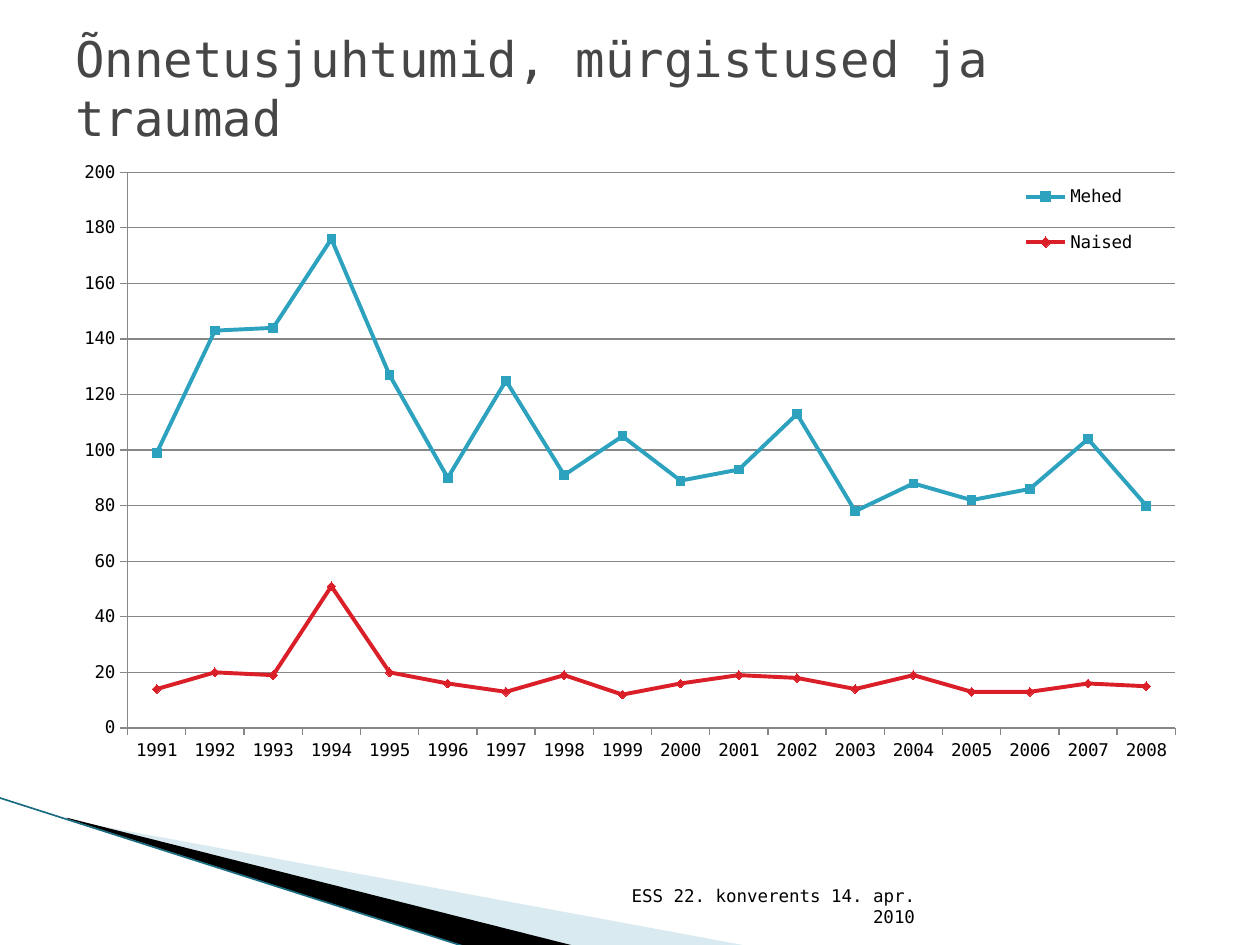
"""Build a slide with a line chart of accidents, poisonings and injuries by sex."""
from lxml import etree
from pptx import Presentation, util as u
from pptx.chart.data import CategoryChartData
from pptx.dml.color import RGBColor
from pptx.enum import chart as charts, shapes, text
from pptx.oxml import ns

TITLE = "Õnnetusjuhtumid, mürgistused ja traumad"
FOOTER = "ESS 22. konverents 14. apr. 2010"
YEARS = [str(year) for year in range(1991, 2009)]
SERIES = [
    ("Mehed", [99, 143, 144, 176, 127, 90, 125, 91, 105, 89, 93, 113, 78, 88, 82, 86, 104, 80]),
    ("Naised", [14, 20, 19, 51, 20, 16, 13, 19, 12, 16, 19, 18, 14, 19, 13, 13, 16, 15]),
]
THEME = {
    "font": "DejaVu Sans Mono", "title_size": 28, "body_size": 10,
    "title": "464646", "text": "000000", "grid": "878787", "edge": "1A6C80",
    "series": ["2DA2BF", "DA1F28"],
}
MARKERS = [(charts.XL_MARKER_STYLE.SQUARE, 5), (charts.XL_MARKER_STYLE.DIAMOND, 5)]
WEDGES = [
    ("A0CBDC", 40, [(0.55, 6.51), (5.95, 7.51), (4.56, 7.51), (0.55, 6.5)]),
    ("000000", 100, [(0.53, 6.49), (4.57, 7.51), (3.72, 7.52), (0.54, 6.5)]),
]
EDGE = [(-0.01, 6.33), (3.71, 7.52)]
WIDTH, HEIGHT, MARGIN = 10, 7.5, 0.5
TITLE_TOP, CHART_TOP, CHART_HEIGHT = 0.3, 1.09, 5.34
FOOTER_BOX = (4.79, 7.01, 2.57, 0.4)
PLOT_LAYOUT = {"x": 0.057, "y": 0.052, "w": 0.924, "h": 0.826}
LEGEND_LAYOUT = {"x": 0.831, "y": 0.035, "w": 0.13, "h": 0.174}


def color(name):
    return RGBColor.from_string(name)


def style_font(font, size, name):
    font.name, font.size = THEME["font"], u.Pt(size)
    font.color.rgb = color(name)


def style_line(line, name, width):
    line.color.rgb, line.width = color(name), u.Pt(width)


def add_wedge(slide, fill, opacity, points):
    start, *others = [(u.Inches(x), u.Inches(y)) for x, y in points]
    builder = slide.shapes.build_freeform(*start)
    builder.add_line_segments(others, close=True)
    shape = builder.convert_to_shape()
    shape.shadow.inherit = False
    shape.fill.solid()
    shape.fill.fore_color.rgb = color(fill)
    shape.line.fill.background()
    if opacity < 100:
        tint = next(shape._element.spPr.iter(ns.qn("a:srgbClr")))
        etree.SubElement(tint, ns.qn("a:alpha"), val=str(opacity * 1000))


def add_edge(slide):
    ends = [u.Inches(value) for point in EDGE for value in point]
    connector = slide.shapes.add_connector(shapes.MSO_CONNECTOR.STRAIGHT, *ends)
    style_line(connector.line, THEME["edge"], 0.95)
    etree.SubElement(connector._element.spPr, ns.qn("a:effectLst"))


def add_text(slide, box, content, size, name, anchor, alignment):
    shape = slide.shapes.add_textbox(*map(u.Inches, box))
    frame = shape.text_frame
    frame.word_wrap, frame.vertical_anchor = True, anchor
    frame.text = content
    paragraph = frame.paragraphs[0]
    paragraph.alignment = alignment
    style_font(paragraph.runs[0].font, size, name)


def set_layout(element, index, shares, inner=False):
    for old in element.findall(ns.qn("c:layout")):
        element.remove(old)
    layout = etree.Element(ns.qn("c:layout"))
    manual = etree.SubElement(layout, ns.qn("c:manualLayout"))
    settings = {"layoutTarget": "inner"} if inner else {}
    settings.update(xMode="edge", yMode="edge", **shares)
    for tag, value in settings.items():
        etree.SubElement(manual, ns.qn("c:" + tag), val=str(value))
    element.insert(index, layout)


def add_line_chart(slide):
    data = CategoryChartData()
    data.categories = YEARS
    for name, values in SERIES:
        data.add_series(name, values)
    box = (MARGIN, CHART_TOP, WIDTH - 2 * MARGIN, CHART_HEIGHT)
    chart = slide.shapes.add_chart(
        charts.XL_CHART_TYPE.LINE_MARKERS, *map(u.Inches, box), data).chart
    style_font(chart.font, THEME["body_size"], THEME["text"])
    chart.has_title = False
    chart.has_legend = True
    chart.legend.position = charts.XL_LEGEND_POSITION.RIGHT
    chart.legend.include_in_layout = False
    set_layout(chart.legend._element, 1, LEGEND_LAYOUT)
    set_layout(chart._chartSpace.chart.plotArea, 0, PLOT_LAYOUT, inner=True)

    values = chart.value_axis
    values.minimum_scale, values.maximum_scale, values.major_unit = 0, 200, 20
    values.has_major_gridlines = True
    style_line(values.major_gridlines.format.line, THEME["grid"], 0.75)
    chart.category_axis.has_major_gridlines = False
    for axis in (values, chart.category_axis):
        axis.major_tick_mark = charts.XL_TICK_MARK.OUTSIDE
        style_line(axis.format.line, THEME["grid"], 0.75)

    plot = chart.plots[0]
    plot.vary_by_categories = False
    for series, name, (style, size) in zip(plot.series, THEME["series"], MARKERS):
        series.smooth = False
        style_line(series.format.line, name, 2.25)
        marker = series.marker
        marker.style, marker.size = style, size
        marker.format.fill.solid()
        marker.format.fill.fore_color.rgb = color(name)
        style_line(marker.format.line, name, 0.75)


def main():
    presentation = Presentation()
    presentation.slide_width, presentation.slide_height = u.Inches(WIDTH), u.Inches(HEIGHT)
    slide = presentation.slides.add_slide(presentation.slide_layouts[6])
    for wedge in WEDGES:
        add_wedge(slide, *wedge)
    add_edge(slide)
    add_text(slide, FOOTER_BOX, FOOTER, THEME["body_size"], THEME["text"],
             text.MSO_ANCHOR.BOTTOM, text.PP_ALIGN.RIGHT)
    title_box = (MARGIN, TITLE_TOP, WIDTH - 2 * MARGIN, CHART_TOP - TITLE_TOP)
    add_text(slide, title_box, TITLE, THEME["title_size"], THEME["title"],
             text.MSO_ANCHOR.MIDDLE, text.PP_ALIGN.LEFT)
    add_line_chart(slide)
    presentation.save("out.pptx")


if __name__ == "__main__":
    main()
